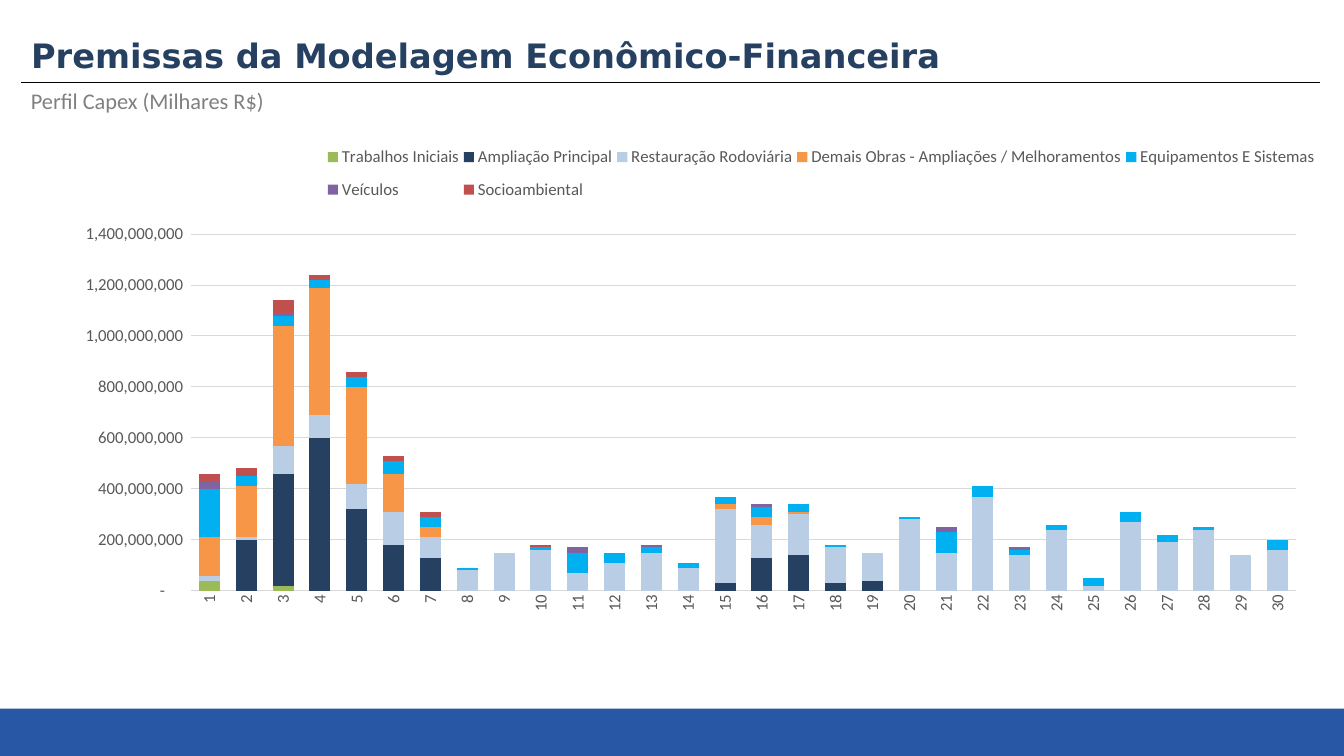
"""Build the Capex profile slide with its stacked column chart."""
from lxml.etree import SubElement
from pptx import Presentation
from pptx.chart.data import CategoryChartData
from pptx.dml.color import RGBColor
from pptx.enum.chart import XL_CHART_TYPE, XL_LEGEND_POSITION, XL_TICK_MARK
from pptx.enum.shapes import MSO_CONNECTOR, MSO_SHAPE
from pptx.enum.text import MSO_ANCHOR, PP_ALIGN
from pptx.oxml import parse_xml
from pptx.oxml.ns import nsdecls, qn
from pptx.util import Cm, Pt

TITLE = "Premissas da Modelagem Econômico-Financeira"
NOTE = "Perfil Capex (Milhares R$)"
YEARS = 30
UNIT = 10_000_000
FORMAT = r'_-* #,##0_-;\-* #,##0_-;_-* "-"??_-;_-@_'
GREY, PALE = "595959", "D9D9D9"
SERIES = [
    ("Trabalhos Iniciais", "9BBB59", [4, 0, 2]),
    ("Ampliação Principal", "254061",
     [0, 20, 44, 60, 32, 18, 13, 0, 0, 0, 0, 0, 0, 0, 3, 13, 14, 3, 4]),
    ("Restauração Rodoviária", "B9CDE5",
     [2, 1, 11, 9, 10, 13, 8, 8, 15, 16, 7, 11, 15, 9, 29,
      13, 16, 14, 11, 28, 15, 37, 14, 24, 2, 27, 19, 24, 14, 16]),
    ("Demais Obras - Ampliações / Melhoramentos", "F79646",
     [15, 20, 47, 50, 38, 15, 4, 0, 0, 0, 0, 0, 0, 0, 2, 3, 1]),
    ("Equipamentos E Sistemas", "00B0F0",
     [19, 4, 4, 3, 4, 5, 4, 1, 0, 1, 8, 4, 2, 2, 3,
      4, 3, 1, 0, 1, 8, 4, 2, 2, 3, 4, 3, 1, 0, 4]),
    ("Veículos", "8064A2",
     [3, 0, 1, 0, 0, 0, 0, 0, 0, 0, 2, 0, 1, 0, 0, 1, 0, 0, 0, 0, 2, 0, 1]),
    ("Socioambiental", "C0504D", [3, 3, 5, 2, 2, 2, 2, 0, 0, 1]),
]


def tint(code):
    return RGBColor.from_string(code)


def style(font, size, color, face="Calibri", bold=False):
    font.size, font.name, font.bold = Pt(size), face, bold
    font.color.rgb = tint(color)


def write(box, words, align=PP_ALIGN.LEFT, **look):
    frame = box.text_frame
    frame.word_wrap = True
    frame.vertical_anchor = MSO_ANCHOR.TOP
    para = frame.paragraphs[0]
    para.alignment = align
    run = para.add_run()
    run.text = words
    style(run.font, **look)


def layout(left, top, width, height, inner=False):
    node = parse_xml(f"<c:layout {nsdecls('c')}><c:manualLayout/></c:layout>")
    pairs = [("layoutTarget", "inner")] if inner else []
    pairs += [("xMode", "edge"), ("yMode", "edge"),
              ("x", left), ("y", top), ("w", width), ("h", height)]
    for tag, val in pairs:
        SubElement(node[0], qn(f"c:{tag}")).set("val", str(val))
    return node


def place(parent, index, node):
    for old in parent.findall(qn("c:layout")):
        parent.remove(old)
    parent.insert(index, node)


def rule(line, color):
    line.color.rgb = tint(color)
    line.width = Pt(0.75)


def draw_chart(slide):
    data = CategoryChartData(number_format=FORMAT)
    data.categories = [str(year + 1) for year in range(YEARS)]
    for name, _, vals in SERIES:
        full = vals + [0] * (YEARS - len(vals))
        data.add_series(name, [val * UNIT for val in full])
    chart = slide.shapes.add_chart(
        XL_CHART_TYPE.COLUMN_STACKED,
        Cm(0.64), Cm(3.07), Cm(32.61), Cm(16.26), data).chart
    style(chart.font, 12, "000000")
    chart.has_title = False

    plot = chart.plots[0]
    plot.gap_width, plot.overlap = 75, 100
    plot.vary_by_categories = False
    for bars, (_, color, _) in zip(plot.series, SERIES):
        bars.format.fill.solid()
        bars.format.fill.fore_color.rgb = tint(color)
    area = chart.element.find(".//" + qn("c:plotArea"))
    place(area, 0, layout(0.128, 0.174, 0.854, 0.553, inner=True))

    for axis in (chart.category_axis, chart.value_axis):
        axis.major_tick_mark = axis.minor_tick_mark = XL_TICK_MARK.NONE
        style(axis.tick_labels.font, 12, GREY)
    base, scale = chart.category_axis, chart.value_axis
    base.has_major_gridlines = False
    rule(base.format.line, PALE)
    turn = base.tick_labels.font
    body = base._element.find(qn("c:txPr")).find(qn("a:bodyPr"))
    body.set("rot", "-5400000")
    body.set("vert", "horz")
    scale.has_major_gridlines = True
    rule(scale.major_gridlines.format.line, PALE)
    scale.format.line.fill.background()
    scale.minimum_scale, scale.maximum_scale = 0, 140 * UNIT
    scale.major_unit = 20 * UNIT
    scale.tick_labels.number_format = FORMAT
    scale.tick_labels.number_format_is_linked = False

    chart.has_legend = True
    legend = chart.legend
    legend.position = XL_LEGEND_POSITION.TOP
    legend.include_in_layout = False
    style(legend.font, 12, GREY)
    place(legend._element, 1, layout(0.23, 0.02, 0.77, 0.12))


def main():
    deck = Presentation()
    deck.slide_width, deck.slide_height = Cm(33.87), Cm(19.05)
    slide = deck.slides.add_slide(deck.slide_layouts[5])
    shapes = slide.shapes

    band = shapes.add_shape(
        MSO_SHAPE.RECTANGLE, 0, Cm(17.86), deck.slide_width, Cm(1.19))
    band.shadow.inherit = False
    band.fill.solid()
    band.fill.fore_color.rgb = tint("2857A5")
    band.line.fill.background()

    line = shapes.add_connector(
        MSO_CONNECTOR.STRAIGHT, Cm(0.53), Cm(2.08), Cm(33.27), Cm(2.08))
    rule(line.line, "000000")
    SubElement(line._element.spPr, qn("a:effectLst"))

    note = shapes.add_textbox(Cm(0.53), Cm(2.06), Cm(27), Cm(0.94))
    write(note, NOTE, align=PP_ALIGN.JUSTIFY, size=16, color="808080")

    title = shapes.title
    title.left, title.top = Cm(0.53), Cm(0.74)
    title.width, title.height = Cm(24.21), Cm(1.27)
    write(title, TITLE, size=24, color="254061", face="DejaVu Sans", bold=True)

    draw_chart(slide)
    deck.save("out.pptx")


if __name__ == "__main__":
    main()
